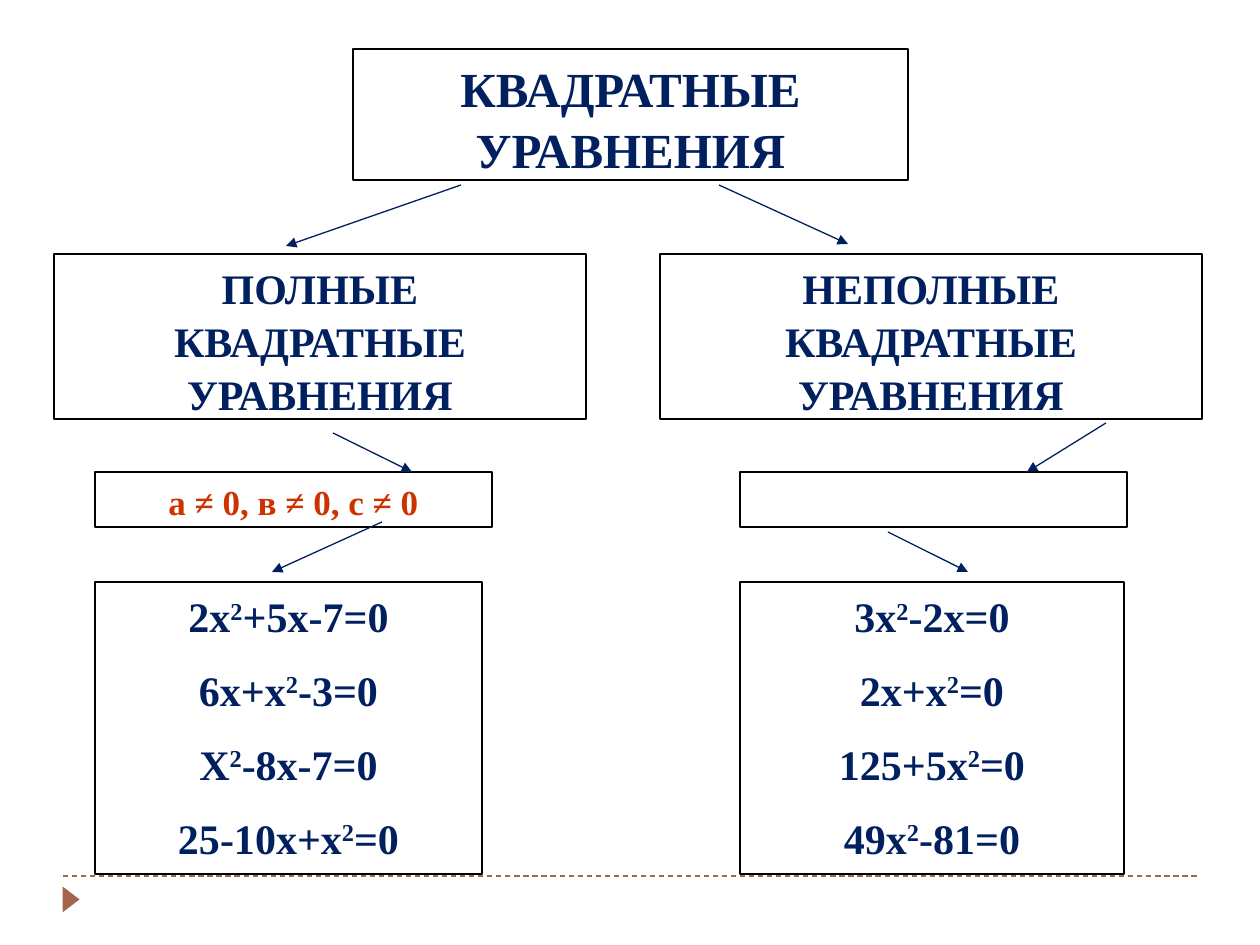
import pptx
import pptx.dml.color
import pptx.enum.dml
import pptx.enum.shapes
import pptx.enum.text
import pptx.oxml.ns
import pptx.util
from lxml import etree

PX = 914400 // 126
COLORS = {"paper": "FFFFFF", "frame": "000000", "navy": "002060",
          "red": "CC3300", "accent": "A5644E"}
SHAPES = pptx.enum.shapes.MSO_SHAPE
FONT = "Times New Roman"

LEFT_EQUATIONS = ["2х^2^+5х-7=0", "6х+х^2^-3=0", "Х^2^-8х-7=0", "25-10х+х^2^=0"]
RIGHT_EQUATIONS = ["3х^2^-2х=0", "2х+х^2^=0", "125+5х^2^=0", "49х^2^-81=0"]

# Left, top, width, height, paragraphs, text size, text colour
BOXES = [
    (54, 254, 532, 165, ["ПОЛНЫЕ\vКВАДРАТНЫЕ УРАВНЕНИЯ"], 24, "navy"),
    (660, 254, 542, 165, ["НЕПОЛНЫЕ\vКВАДРАТНЫЕ УРАВНЕНИЯ"], 24, "navy"),
    (353, 49, 555, 131, ["КВАДРАТНЫЕ УРАВНЕНИЯ"], 28, "navy"),
    (95, 472, 397, 55, ["а ≠ 0, в ≠ 0, с ≠ 0"], 20, "red"),
    (740, 472, 387, 55, [], 20, "red"),
    (95, 582, 387, 292, LEFT_EQUATIONS, 24, "navy"),
    (740, 582, 384, 292, RIGHT_EQUATIONS, 24, "navy"),
]

# Start x, start y, end x, end y
ARROWS = [
    (461, 185, 286, 246), (719, 185, 848, 244),
    (333, 433, 412, 472), (1106, 423, 1027, 472),
    (382, 522, 272, 572), (888, 532, 968, 572),
]


def px(*values):
    return [value * PX for value in values]


def color(name):
    return pptx.dml.color.RGBColor.from_string(COLORS[name])


def set_values(target, values):
    for name, value in values.items():
        setattr(target, name, value)


def add_line(slide, ends, color_name, dashed=False, arrow=False):
    connector = slide.shapes.add_connector(
        pptx.enum.shapes.MSO_CONNECTOR.STRAIGHT, *px(*ends))
    connector.line.color.rgb = color(color_name)
    connector.line.width = pptx.util.Pt(0.75)
    if dashed:
        connector.line.dash_style = pptx.enum.dml.MSO_LINE.DASH
    qn = pptx.oxml.ns.qn
    if arrow:
        etree.SubElement(connector.line._get_or_add_ln(), qn("a:tailEnd"), type="triangle")
    etree.SubElement(connector._element.spPr, qn("a:effectLst"))


def add_filled_shape(slide, kind, bounds, fill):
    shape = slide.shapes.add_shape(kind, *px(*bounds))
    shape.shadow.inherit = False
    shape.fill.solid()
    shape.fill.fore_color.rgb = color(fill)
    shape.line.fill.background()
    return shape


def write_paragraph(paragraph, text, size, color_name):
    """Write text in which ^...^ marks a superscript."""
    paragraph.alignment = pptx.enum.text.PP_ALIGN.CENTER
    for index, part in enumerate(text.split("^")):
        for line_index, line in enumerate(part.split("\v")):
            if line_index:
                paragraph.add_line_break()
            run = paragraph.add_run()
            run.text = line
            set_values(run.font, {"name": FONT, "size": pptx.util.Pt(size), "bold": True})
            run.font.color.rgb = color(color_name)
            if index % 2:
                run._r.get_or_add_rPr().set("baseline", "30000")


def add_box(slide, left, top, width, height, texts, size, color_name):
    box = add_filled_shape(slide, SHAPES.RECTANGLE, (left, top, width, height), "paper")
    box.line.color.rgb = color("frame")
    box.line.width = pptx.util.Pt(1.5)
    frame = box.text_frame
    set_values(frame, {"word_wrap": True,
                       "vertical_anchor": pptx.enum.text.MSO_ANCHOR.TOP})
    for index, text in enumerate(texts):
        paragraph = frame.add_paragraph() if index else frame.paragraphs[0]
        write_paragraph(paragraph, text, size, color_name)
        paragraph.line_spacing = 1.05
        if index:
            paragraph.space_before = pptx.util.Pt(size / 2)


def main():
    presentation = pptx.Presentation()
    set_values(presentation, {"slide_width": pptx.util.Inches(10),
                              "slide_height": pptx.util.Inches(7.5)})
    slide = presentation.slides.add_slide(presentation.slide_layouts[6])

    # Footer rule and marker
    add_line(slide, (63, 876, 1197, 876), "accent", dashed=True)
    marker = add_filled_shape(slide, SHAPES.ISOSCELES_TRIANGLE, (58, 891, 26, 17), "accent")
    marker.rotation = 90

    # Tree of equation kinds
    for box in BOXES:
        add_box(slide, *box)
    for ends in ARROWS:
        add_line(slide, ends, "navy", arrow=True)

    presentation.save("out.pptx")


if __name__ == "__main__":
    main()
